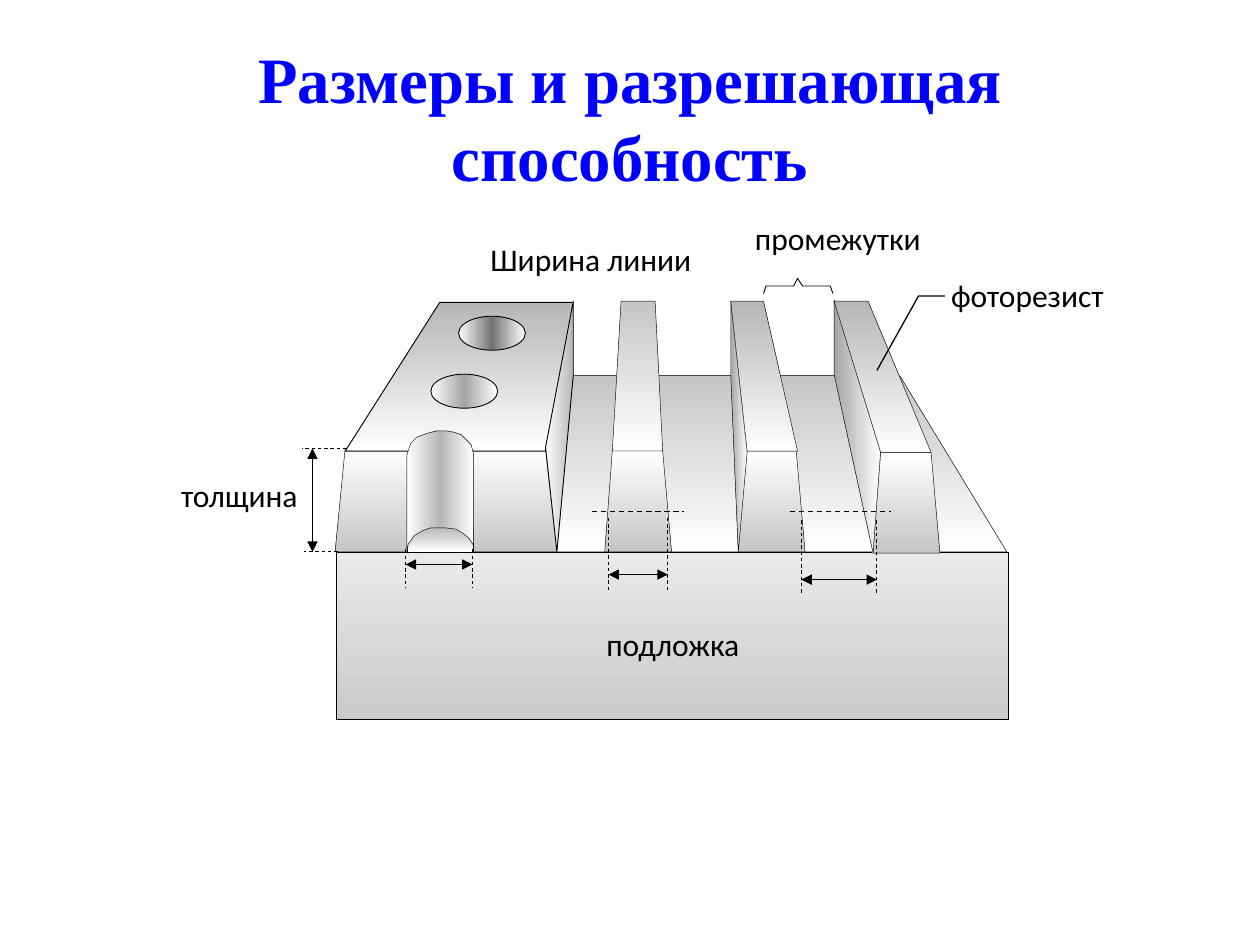
from copy import deepcopy
from pptx import Presentation
from pptx.dml.color import RGBColor
from pptx.enum.shapes import MSO_CONNECTOR as CONN, MSO_SHAPE as SHAPE
from pptx.enum.text import MSO_ANCHOR as ANCHOR, PP_ALIGN as ALIGN
from pptx.oxml.ns import qn
from pptx.oxml.xmlchemy import OxmlElement as Element
from pptx.util import Inches, Pt

WIDTH, HEIGHT = Inches(10), Inches(7.5)
UNIT = WIDTH // 1000
DOWN, ACROSS = 270, 0
TOP, EDGE, BASE = 239, 358, 438
WHITE, BLACK, BLUE = "FFFFFF", "000000", "0000FF"
FRONT, FLOOR = (WHITE, "C6C6C6"), ("C6C6C6", WHITE)
ROOF, SIDE = ("B6B6B6", WHITE), ("A4A4A4", WHITE)
ARCH = [(323, 438), (323, 361), (326, 352), (331, 347), (339, 344),
        (347, 342), (354, 342), (360, 343), (366, 345), (370, 349),
        (374, 353), (376, 361), (376, 438), (376, 433), (372, 427),
        (367, 423), (362, 420), (353, 419), (342, 419), (336, 421),
        (329, 425), (324, 432)]


def grid(*values):
    return [v * UNIT for v in values]


def color(value):
    return RGBColor.from_string(value)


def paint(s, fill, angle, weight):
    s.shadow.inherit = False
    s.line.color.rgb = color(BLACK)
    s.line.width = Pt(weight)
    if not fill:
        s.fill.background()
        return
    s.fill.gradient()
    s.fill.gradient_angle = angle
    stops = s._element.spPr.find(qn("a:gradFill")).find(qn("a:gsLst"))
    for _ in fill[2:]:
        stops.append(deepcopy(stops[0]))
    for i, (stop, value) in enumerate(zip(s.fill.gradient_stops, fill)):
        stop.color.rgb = color(value)
        stop.position = i / (len(fill) - 1)


def add_outline(sp, points, fill=None, angle=DOWN, weight=0.25):
    builder = sp.build_freeform(*points[0], scale=UNIT)
    builder.add_line_segments(points[1:], close=bool(fill))
    paint(builder.convert_to_shape(), fill, angle, weight)


def add_preset(sp, kind, box, fill, angle=DOWN, weight=0.25):
    paint(sp.add_shape(kind, *grid(*box)), fill, angle, weight)


def add_text(sp, box, text, align=ALIGN.CENTER, size=18, font="Calibri",
             value=BLACK, title=False):
    tf = sp.add_textbox(*grid(*box)).text_frame
    tf.word_wrap = title
    if title:
        tf.vertical_anchor = ANCHOR.MIDDLE
        tf.margin_left = tf.margin_right = Inches(0.3)
    p = tf.paragraphs[0]
    p.text = text
    p.alignment = align
    p.font.size, p.font.name, p.font.bold = Pt(size), font, title
    p.font.color.rgb = color(value)


def add_line(sp, x1, y1, x2, y2, weight=0.5, dashed=False):
    s = sp.add_connector(CONN.STRAIGHT, *grid(x1, y1, x2, y2))
    s.line.color.rgb = color(BLACK)
    s.line.width = Pt(weight)
    ln = s.line._get_or_add_ln()
    if dashed:
        ln.append(Element("a:prstDash"))
        ln[-1].set("val", "dash")
    else:
        for tag in ("a:headEnd", "a:tailEnd"):
            ln.append(Element(tag))
            ln[-1].set("type", "triangle")
    s._element.spPr.append(Element("a:effectLst"))


def add_front(sp, x, y=EDGE):
    add_outline(sp, [(x, y + 80), (x + 6, y), (x + 46, y), (x + 53, y + 80)], FRONT)


def add_substrate(sp):
    add_outline(sp, [(352, 298), (714, 298), (799, BASE), (267, BASE)], FLOOR)
    add_preset(sp, SHAPE.RECTANGLE, (267, BASE, 533, 133), ("EAEAEA", "CACACA"))


def add_narrow_lines(sp):
    add_outline(sp, [(493, TOP), (520, TOP), (526, EDGE), (486, EDGE)], FLOOR)
    add_front(sp, 480)
    add_front(sp, 586)
    add_outline(sp, [(586, BASE), (580, 298), (580, TOP), (593, 359)], SIDE, ACROSS)
    add_outline(sp, [(633, EDGE), (593, EDGE), (580, TOP), (606, TOP)], ROOF)


def add_block(sp):
    add_outline(sp, [(266, BASE), (274, 356), (433, 356), (442, BASE)], FRONT)
    add_outline(sp, [(274, EDGE), (349, 240), (455, 240), (433, EDGE)], ROOF, weight=0.5)
    for x, y, middle in ((364, 251, "727272"), (342, 297, "A4A4A4")):
        add_preset(sp, SHAPE.OVAL, (x, y, 53, 27), (WHITE, middle, WHITE), ACROSS, 0.5)
    add_preset(sp, SHAPE.RECTANGLE, (323, 418, 53, 20), ROOF)
    add_outline(sp, ARCH, (WHITE, "B6B6B6", WHITE), ACROSS)
    add_outline(sp, [(442, BASE), (455, 298), (455, TOP), (433, 355)],
                ROOF[::-1], ACROSS, 0.5)


def add_right_line(sp):
    add_outline(sp, [(693, 439), (662, 297), (662, 238), (699, 359)], SIDE, ACROSS)
    add_outline(sp, [(739, 359), (699, 359), (662, TOP), (689, TOP)], ROOF)
    add_front(sp, 693, 359)


def add_dimensions(sp):
    for left, right, top, bottom, y, weight in ((322, 375, 436, 467, 448, 0.75),
                                                (636, 696, 413, 471, 460, 0.75),
                                                (483, 530, 411, 470, 456, 0.5)):
        for x in (left, right):
            add_line(sp, x, top, x, bottom, dashed=True)
        add_line(sp, left, y, right, y, weight)
    add_line(sp, 275, 356, 240, 356, dashed=True)
    add_line(sp, 268, BASE, 241, BASE, dashed=True)
    add_line(sp, 248, 356, 248, BASE, 0.75)
    for left, right in ((470, 543), (627, 707)):
        add_line(sp, left, 406, right, 406, 0.75, dashed=True)
    add_outline(sp, [(750, 235), (729, 235), (696, 294)], weight=0.75)
    add_outline(sp, [(606, 233), (608, 227), (630, 227), (633, 221),
                     (637, 227), (659, 227), (661, 233)], weight=0.5)


def add_labels(sp):
    add_text(sp, (374, 186, 190, 40), "Ширина линии")
    add_text(sp, (586, 169, 158, 40), "промежутки")
    add_text(sp, (124, 373, 122, 40), "толщина", ALIGN.RIGHT)
    add_text(sp, (468, 491, 132, 40), "подложка")
    add_text(sp, (745, 214, 157, 40), "фоторезист", ALIGN.LEFT)


def main():
    prs = Presentation()
    prs.slide_width, prs.slide_height = WIDTH, HEIGHT
    sp = prs.slides.add_slide(prs.slide_layouts[6]).shapes
    add_text(sp, (50, 30, 900, 125), "Размеры и разрешающая способность",
             size=37, font="Times New Roman", value=BLUE, title=True)
    add_substrate(sp)
    add_narrow_lines(sp)
    add_block(sp)
    add_right_line(sp)
    add_labels(sp)
    add_dimensions(sp)
    prs.save("out.pptx")


if __name__ == "__main__":
    main()
